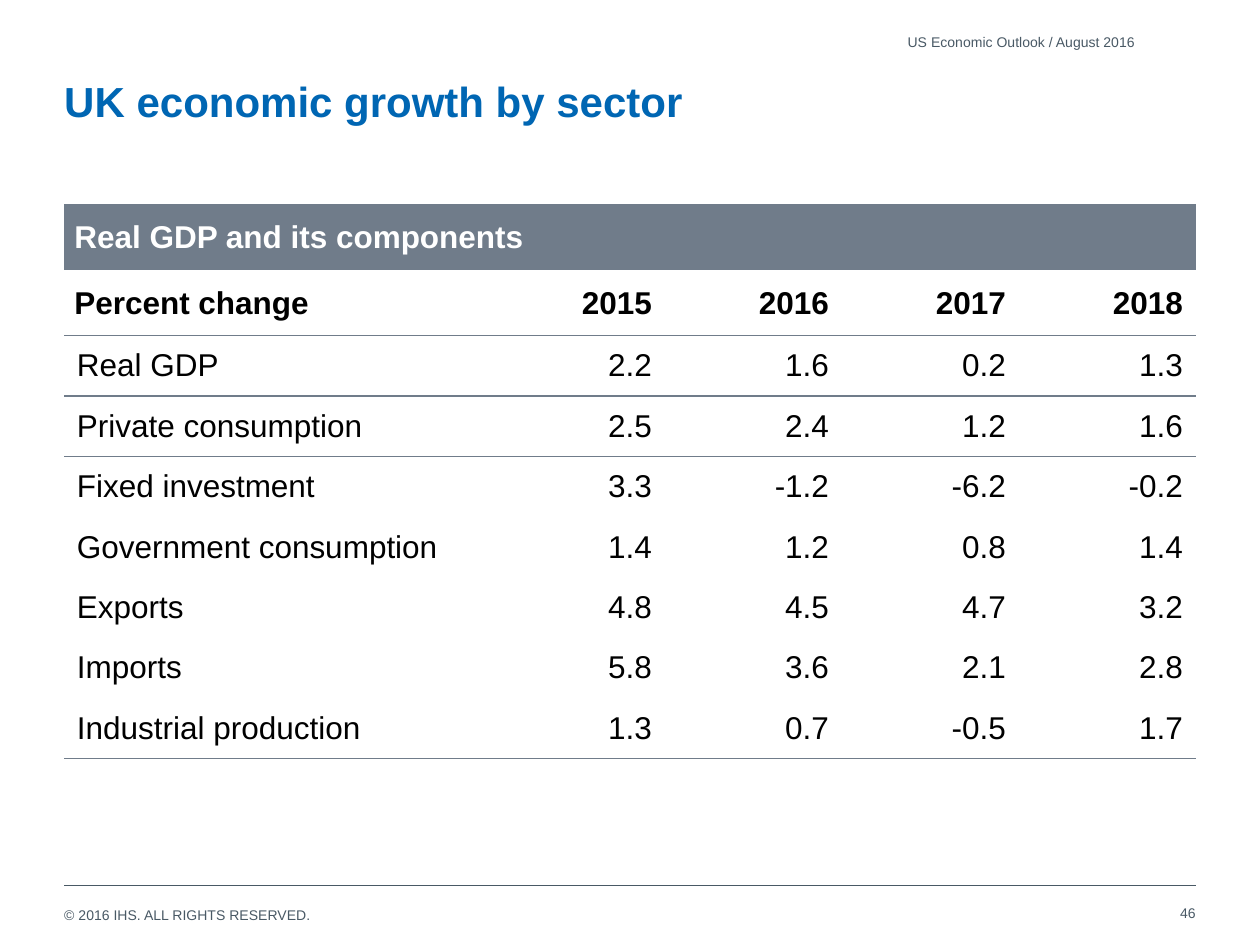
from dataclasses import dataclass
from typing import NamedTuple, Optional

import pptx
import pptx.dml.color
import pptx.enum.shapes
import pptx.enum.text
import pptx.oxml
import pptx.oxml.ns
import pptx.util

ALIGN = pptx.enum.text.PP_ALIGN
ANCHOR = pptx.enum.text.MSO_ANCHOR
WIDTH, HEIGHT = pptx.util.Inches(10), pptx.util.Inches(7.5)


@dataclass(frozen=True)
class Theme:
    font: str = "Arial"
    heading: str = "0066B3"
    muted: str = "495965"
    band: str = "707C8A"
    body: str = "000000"
    paper: str = "FFFFFF"
    heading_size: float = 24
    table_size: float = 18
    small_size: float = 8


THEME = Theme()


class Area(NamedTuple):
    """Left, top, width and height as percentages of the slide's size."""
    left: float
    top: float
    width: float
    height: float

    def lengths(self) -> tuple[int, ...]:
        sides = (WIDTH, HEIGHT, WIDTH, HEIGHT)
        return tuple(round(share * side / 100) for share, side in zip(self, sides))


class Caption(NamedTuple):
    text: str
    area: Area
    size: float = THEME.small_size
    color: str = THEME.muted
    bold: bool = False
    align: ALIGN = ALIGN.LEFT
    anchor: ANCHOR = ANCHOR.MIDDLE


class Rule(NamedTuple):
    """Border of a table row."""
    color: str
    points: float


class Row(NamedTuple):
    label: str
    values: tuple[str, ...]
    height: float = 6.4  # percent of the slide's height
    bold: bool = False
    color: str = THEME.body
    fill: Optional[str] = None
    inset: tuple[float, float] = (0.1, 0.05)
    top: Optional[Rule] = None
    bottom: Optional[Rule] = None


MARGIN, CONTENT = 5.1, 89.8
LABEL_WIDTH, YEAR_WIDTH = 33.6, 14.05
TABLE_TOP = 21.6
FOOTER_LINE = 93.7

CAPTIONS = [
    Caption("© 2016 IHS. ALL RIGHTS RESERVED.", Area(MARGIN, 95.9, 68.5, 1.7),
            anchor=ANCHOR.TOP),
    Caption("UK economic growth by sector", Area(MARGIN, 8, CONTENT, 11.6),
            THEME.heading_size, THEME.heading, bold=True, anchor=ANCHOR.TOP),
    Caption("46", Area(72.3, 94, 22.6, 5.3), align=ALIGN.RIGHT),
    Caption("US Economic Outlook / August 2016", Area(MARGIN, 2.8, 85, 3.2),
            align=ALIGN.RIGHT),
]

WHITE_RULE, GREY_RULE = Rule(THEME.paper, 1.5), Rule(THEME.band, 1)
HEADER_INSET = (0.08, 0.06)
ROWS = [
    Row("Real GDP and its components", (), 7.1, True, THEME.paper, THEME.band,
        HEADER_INSET, bottom=WHITE_RULE),
    Row("Percent change", ("2015", "2016", "2017", "2018"), 6.8, True,
        inset=HEADER_INSET, top=WHITE_RULE, bottom=GREY_RULE),
    Row("Real GDP", ("2.2", "1.6", "0.2", "1.3"), top=GREY_RULE, bottom=GREY_RULE),
    Row("Private consumption", ("2.5", "2.4", "1.2", "1.6"), top=GREY_RULE),
    Row("Fixed investment", ("3.3", "-1.2", "-6.2", "-0.2")),
    Row("Government consumption", ("1.4", "1.2", "0.8", "1.4")),
    Row("Exports", ("4.8", "4.5", "4.7", "3.2")),
    Row("Imports", ("5.8", "3.6", "2.1", "2.8")),
    Row("Industrial production", ("1.3", "0.7", "-0.5", "1.7"), bottom=GREY_RULE),
]


def rgb(color: str) -> pptx.dml.color.RGBColor:
    return pptx.dml.color.RGBColor.from_string(color)


def write(frame, text: str, *, size: float, color: str, bold: bool = False,
          align: ALIGN = ALIGN.LEFT) -> None:
    frame.word_wrap = True
    paragraph = frame.paragraphs[0]
    paragraph.alignment = align
    run = paragraph.add_run()
    run.text = text
    run.font.name = THEME.font
    run.font.size = pptx.util.Pt(size)
    run.font.bold = bold
    run.font.color.rgb = rgb(color)


def draw_caption(slide, caption: Caption) -> None:
    frame = slide.shapes.add_textbox(*caption.area.lengths()).text_frame
    frame.margin_left = frame.margin_right = frame.margin_top = frame.margin_bottom = 0
    frame.vertical_anchor = caption.anchor
    write(frame, caption.text, size=caption.size, color=caption.color,
          bold=caption.bold, align=caption.align)


def draw_footer_line(slide) -> None:
    left, top, width, _ = Area(MARGIN, FOOTER_LINE, CONTENT, 0).lengths()
    footer_line = slide.shapes.add_connector(
        pptx.enum.shapes.MSO_CONNECTOR.STRAIGHT, left, top, left + width, top)
    footer_line.line.color.rgb = rgb(THEME.muted)
    footer_line.line.width = pptx.util.Pt(0.5)
    footer_line._element.spPr.append(pptx.oxml.parse_xml(
        f"<a:effectLst {pptx.oxml.ns.nsdecls('a')}/>"))


def add_border(cell, tag: str, rule: Rule) -> None:
    cell._tc.get_or_add_tcPr().append(pptx.oxml.parse_xml(
        f'<a:{tag} {pptx.oxml.ns.nsdecls("a")} w="{pptx.util.Pt(rule.points)}">'
        f'<a:solidFill><a:srgbClr val="{rule.color}"/></a:solidFill></a:{tag}>'))


def fill_cell(cell, row: Row, text: str, align: ALIGN, inset: tuple[float, float]) -> None:
    cell.margin_left = cell.margin_right = pptx.util.Inches(inset[0])
    cell.margin_top = cell.margin_bottom = pptx.util.Inches(inset[1])
    cell.vertical_anchor = ANCHOR.MIDDLE
    # Borders come before the fill in a cell's properties
    for tag, rule in (("lnT", row.top), ("lnB", row.bottom)):
        if rule:
            add_border(cell, tag, rule)
    if row.fill:
        cell.fill.solid()
        cell.fill.fore_color.rgb = rgb(row.fill)
    else:
        cell.fill.background()
    if text:
        write(cell.text_frame, text, size=THEME.table_size, color=row.color,
              bold=row.bold, align=align)


def draw_growth_table(slide, rows: list[Row]) -> None:
    years = len(rows[1].values)
    area = Area(MARGIN, TABLE_TOP, LABEL_WIDTH + years * YEAR_WIDTH,
                sum(row.height for row in rows))
    growth = slide.shapes.add_table(len(rows), years + 1, *area.lengths()).table
    growth.first_row = growth.horz_banding = False
    # The plain style has neither grid nor fills
    style = growth._tbl.tblPr.find(pptx.oxml.ns.qn("a:tableStyleId"))
    style.text = "{2D5ABB26-0587-4C30-8999-92F81FD0307C}"

    for column, share in zip(growth.columns, [LABEL_WIDTH] + [YEAR_WIDTH] * years):
        column.width = round(share * WIDTH / 100)
    for index, row in enumerate(rows):
        growth.rows[index].height = round(row.height * HEIGHT / 100)
        if not row.values:
            growth.cell(index, 0).merge(growth.cell(index, years))
        fill_cell(growth.cell(index, 0), row, row.label, ALIGN.LEFT, row.inset)
        for year in range(years):
            value = row.values[year] if row.values else ""
            fill_cell(growth.cell(index, year + 1), row, value, ALIGN.RIGHT, (0.1, 0.05))


def main() -> None:
    deck = pptx.Presentation()
    deck.slide_width, deck.slide_height = WIDTH, HEIGHT
    slide = deck.slides.add_slide(deck.slide_layouts[6])

    # Heading, running header and footer
    draw_footer_line(slide)
    for caption in CAPTIONS:
        draw_caption(slide, caption)

    # Growth by sector
    draw_growth_table(slide, ROWS)
    deck.save("out.pptx")


if __name__ == "__main__":
    main()
